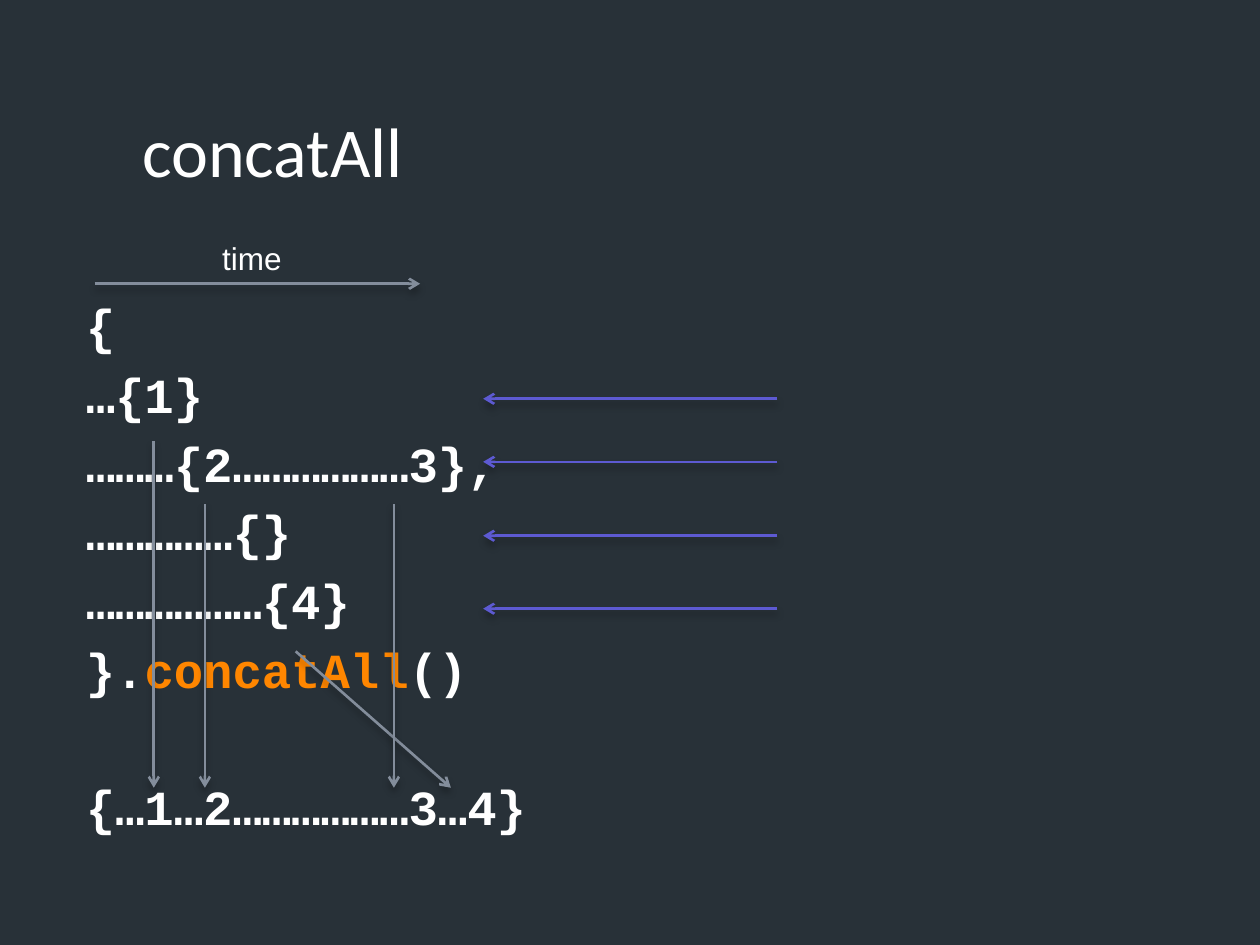
"""Build the concatAll marble diagram slide."""
from lxml import etree
from pptx import Presentation
from pptx.dml.color import RGBColor
from pptx.enum.shapes import MSO_CONNECTOR
from pptx.enum.text import MSO_ANCHOR
from pptx.oxml import parse_xml
from pptx.oxml.ns import nsdecls, qn
from pptx.util import Cm, Pt

STRAIGHT = MSO_CONNECTOR.STRAIGHT
TOP, BOTTOM = MSO_ANCHOR.TOP, MSO_ANCHOR.BOTTOM

BACKGROUND, WHITE, ORANGE = "283138", "FFFFFF", "FF8600"
GRAY, PURPLE = "838D9B", "5D5AD2"

TITLE = [[("concatAll", WHITE)]]
TIME_LABEL = [[("time", WHITE)]]
CODE = [
    [("{", WHITE)],
    [("…{1}", WHITE)],
    [("………{2………………3},", WHITE)],
    [("……………{}", WHITE)],
    [("………………{4}", WHITE)],
    [("}.", WHITE), ("concatAll", ORANGE), ("()", WHITE)],
    [("{…1…2………………3…4}", WHITE)],
]
LINE_GAP, RESULT_GAP = 5.6, 44.8

RESULT_Y = 15.88
VALUE_ARROWS = [
    (3.1, 8.89, 3.1),
    (4.13, 10.16, 4.13),
    (5.96, 13.13, 9.09),
    (7.94, 10.16, 7.94),
]
ROW_ARROW_START, ROW_ARROW_END = 15.67, 9.74
ROW_ARROW_HEIGHTS = [8.04, 9.31, 10.8, 12.27]
TIME_ARROW = (1.91, 5.72, 8.47, 5.72)

SHADOW = (
    f'<a:effectLst {nsdecls("a")}><a:outerShdw blurRad="50800" dist="38100" '
    'dir="5400000" rotWithShape="0"><a:srgbClr val="000000">'
    '<a:alpha val="28000"/></a:srgbClr></a:outerShdw></a:effectLst>'
)


def color(value):
    return RGBColor.from_string(value)


def add_text(slide, box, paragraphs, font, size, bold=False, anchor=TOP, wrap=True):
    shape = slide.shapes.add_textbox(*(Cm(length) for length in box))
    frame = shape.text_frame
    frame.word_wrap = wrap
    frame.vertical_anchor = anchor
    for index, runs in enumerate(paragraphs):
        paragraph = frame.add_paragraph() if index else frame.paragraphs[0]
        for text, run_color in runs:
            run = paragraph.add_run()
            run.text = text
            run.font.name = font
            run.font.size = Pt(size)
            run.font.bold = bold
            run.font.color.rgb = color(run_color)
    return frame


def add_arrow(slide, ends, line_color):
    connector = slide.shapes.add_connector(STRAIGHT, *(Cm(length) for length in ends))
    connector.line.color.rgb = color(line_color)
    connector.line.width = Pt(1.5)
    etree.SubElement(connector.line._get_or_add_ln(), qn("a:tailEnd"), type="arrow")
    connector._element.spPr.append(parse_xml(SHADOW))


def main():
    presentation = Presentation()
    presentation.slide_width, presentation.slide_height = Cm(25.4), Cm(19.05)
    slide = presentation.slides.add_slide(presentation.slide_layouts[6])
    slide.background.fill.solid()
    slide.background.fill.fore_color.rgb = color(BACKGROUND)

    add_text(slide, (2.62, 0.79, 20.32, 3.2), TITLE, "Calibri", 40, anchor=BOTTOM)
    code = add_text(slide, (1.48, 5.84, 23.5, 12.5), CODE, "Courier New", 28, bold=True)
    for paragraph in code.paragraphs[1:]:
        paragraph.space_before = Pt(LINE_GAP)
    code.paragraphs[-1].space_before = Pt(RESULT_GAP)
    add_text(slide, (4.23, 4.7, 1.73, 1.02), TIME_LABEL, "Arial", 18, wrap=False)

    for start_x, start_y, end_x in VALUE_ARROWS:
        add_arrow(slide, (start_x, start_y, end_x, RESULT_Y), GRAY)
    for height in ROW_ARROW_HEIGHTS:
        add_arrow(slide, (ROW_ARROW_START, height, ROW_ARROW_END, height), PURPLE)
    add_arrow(slide, TIME_ARROW, GRAY)

    presentation.save("out.pptx")


if __name__ == "__main__":
    main()
